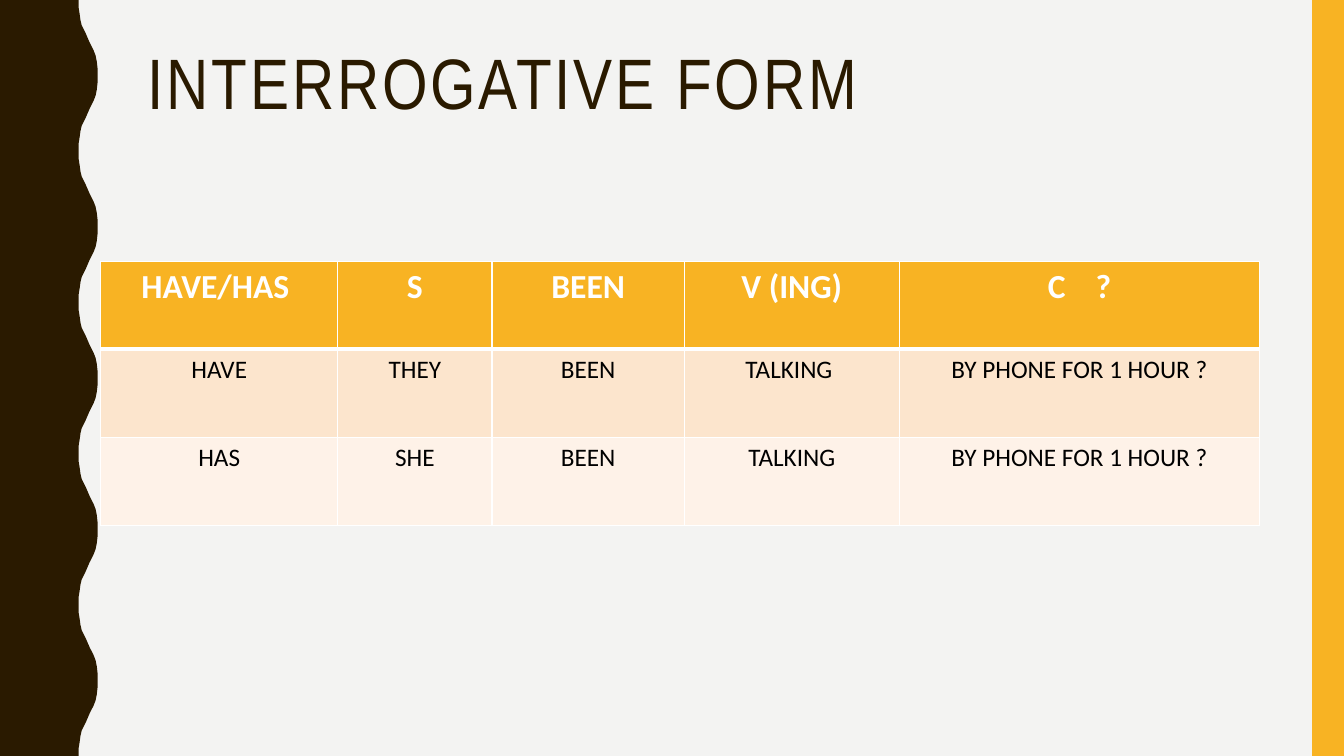
import dataclasses

import pptx
import pptx.dml.color
import pptx.enum.shapes
import pptx.enum.text
import pptx.oxml.ns
import pptx.util
from lxml import etree

Cm = pptx.util.Cm
Pt = pptx.util.Pt


@dataclasses.dataclass(frozen=True)
class Theme:
    background: str = "F3F3F2"
    dark: str = "2A1A00"
    accent: str = "F8B323"
    white: str = "FFFFFF"
    black: str = "000000"
    bands: tuple = ("FCE5CD", "FEF2E8")
    title_font: str = "Arial Narrow"
    body_font: str = "Calibri"
    title_size: int = 51
    header_size: int = 24
    body_size: int = 18


THEME = Theme()
SLIDE_W, SLIDE_H = 33.87, 19.05
WAVE_COUNT = 5
WAVE_LENGTH = SLIDE_H / WAVE_COUNT
HALF_WAVE = [
    (1.98, 0), (1.98, 0.18), (2.01, 0.36), (2.03, 0.51), (2.06, 0.64),
    (2.11, 0.74), (2.16, 0.84), (2.26, 1.07), (2.36, 1.27), (2.41, 1.4),
    (2.44, 1.55), (2.46, 1.73), (2.46, 1.9),
]
COLUMN_WIDTHS = [5.97, 3.89, 4.85, 5.41, 9.09]
ROW_HEIGHT = 2.22
ROWS = [
    ["HAVE/HAS ", "S", "BEEN", "V (ING)", "C ?"],
    ["HAVE", "THEY", "BEEN", "TALKING ", "BY PHONE FOR 1 HOUR ?"],
    ["HAS", "SHE", "BEEN", "TALKING", "BY PHONE FOR 1 HOUR ?"],
]


def rgb(color):
    return pptx.dml.color.RGBColor.from_string(color)


def paint(item, color):
    item.fill.solid()
    item.fill.fore_color.rgb = rgb(color)


def style_shape(sp, color):
    paint(sp, color)
    sp.line.fill.background()
    sp.shadow.inherit = False


def style_font(p, name, size, color, bold=False):
    p.font.name = name
    p.font.size = Pt(size)
    p.font.color.rgb = rgb(color)
    p.font.bold = bold


def add_run(p, text, spacing=0):
    r = p.add_run()
    r.text = text
    if spacing:
        r.font._element.set("spc", str(spacing * 100))


def add_wavy_band(slide):
    mirrored = [(x, WAVE_LENGTH - y) for x, y in reversed(HALF_WAVE[:-1])]
    wave = HALF_WAVE + mirrored
    edge = [(Cm(x), Cm(y + i * WAVE_LENGTH))
            for i in range(WAVE_COUNT) for x, y in wave]
    builder = slide.shapes.build_freeform(0, 0)
    builder.add_line_segments(edge + [(0, Cm(SLIDE_H))], close=True)
    style_shape(builder.convert_to_shape(), THEME.dark)


def add_side_bar(slide):
    width = 0.8
    sp = slide.shapes.add_shape(
        pptx.enum.shapes.MSO_SHAPE.RECTANGLE,
        Cm(SLIDE_W - width), 0, Cm(width), Cm(SLIDE_H))
    style_shape(sp, THEME.accent)


def add_title(slide, text):
    sp = slide.shapes.add_textbox(Cm(3.48), Cm(1.07), Cm(28.27), Cm(4.14))
    tf = sp.text_frame
    tf.word_wrap = True
    p = tf.paragraphs[0]
    p.line_spacing = 0.9
    style_font(p, THEME.title_font, THEME.title_size, THEME.dark)
    add_run(p, text, spacing=2)


def add_borders(cell, widths):
    props = cell._tc.get_or_add_tcPr()
    for side, width in widths.items():
        line = etree.SubElement(props, pptx.oxml.ns.qn(f"a:ln{side}"),
                                w=str(Pt(width)))
        fill = etree.SubElement(line, pptx.oxml.ns.qn("a:solidFill"))
        etree.SubElement(fill, pptx.oxml.ns.qn("a:srgbClr"), val=THEME.white)


def fill_cell(cell, text, row):
    header = row == 0
    add_borders(cell, {"L": 1, "R": 1, "T": 3 if row == 1 else 1,
                       "B": 3 if header else 1})
    paint(cell, THEME.accent if header else THEME.bands[row - 1])
    p = cell.text_frame.paragraphs[0]
    p.alignment = pptx.enum.text.PP_ALIGN.CENTER
    if header:
        style_font(p, THEME.body_font, THEME.header_size, THEME.white, True)
    else:
        style_font(p, THEME.body_font, THEME.body_size, THEME.black)
    if text == "C ?":
        add_run(p, "C")
        add_run(p, " ", spacing=16)
        add_run(p, "?")
    else:
        add_run(p, text)


def add_grammar_table(slide):
    table = slide.shapes.add_table(
        len(ROWS), len(COLUMN_WIDTHS), Cm(2.54), Cm(6.58),
        Cm(sum(COLUMN_WIDTHS)), Cm(ROW_HEIGHT * len(ROWS))).table
    for column, width in zip(table.columns, COLUMN_WIDTHS):
        column.width = Cm(width)
    for i, texts in enumerate(ROWS):
        table.rows[i].height = Cm(ROW_HEIGHT)
        for j, text in enumerate(texts):
            fill_cell(table.cell(i, j), text, i)


def main():
    prs = pptx.Presentation()
    prs.slide_width, prs.slide_height = Cm(SLIDE_W), Cm(SLIDE_H)
    slide = prs.slides.add_slide(prs.slide_layouts[6])
    paint(slide.background, THEME.background)
    add_wavy_band(slide)
    add_side_bar(slide)
    add_title(slide, "INTERROGATIVE FORM")
    add_grammar_table(slide)
    prs.save("out.pptx")


if __name__ == "__main__":
    main()
